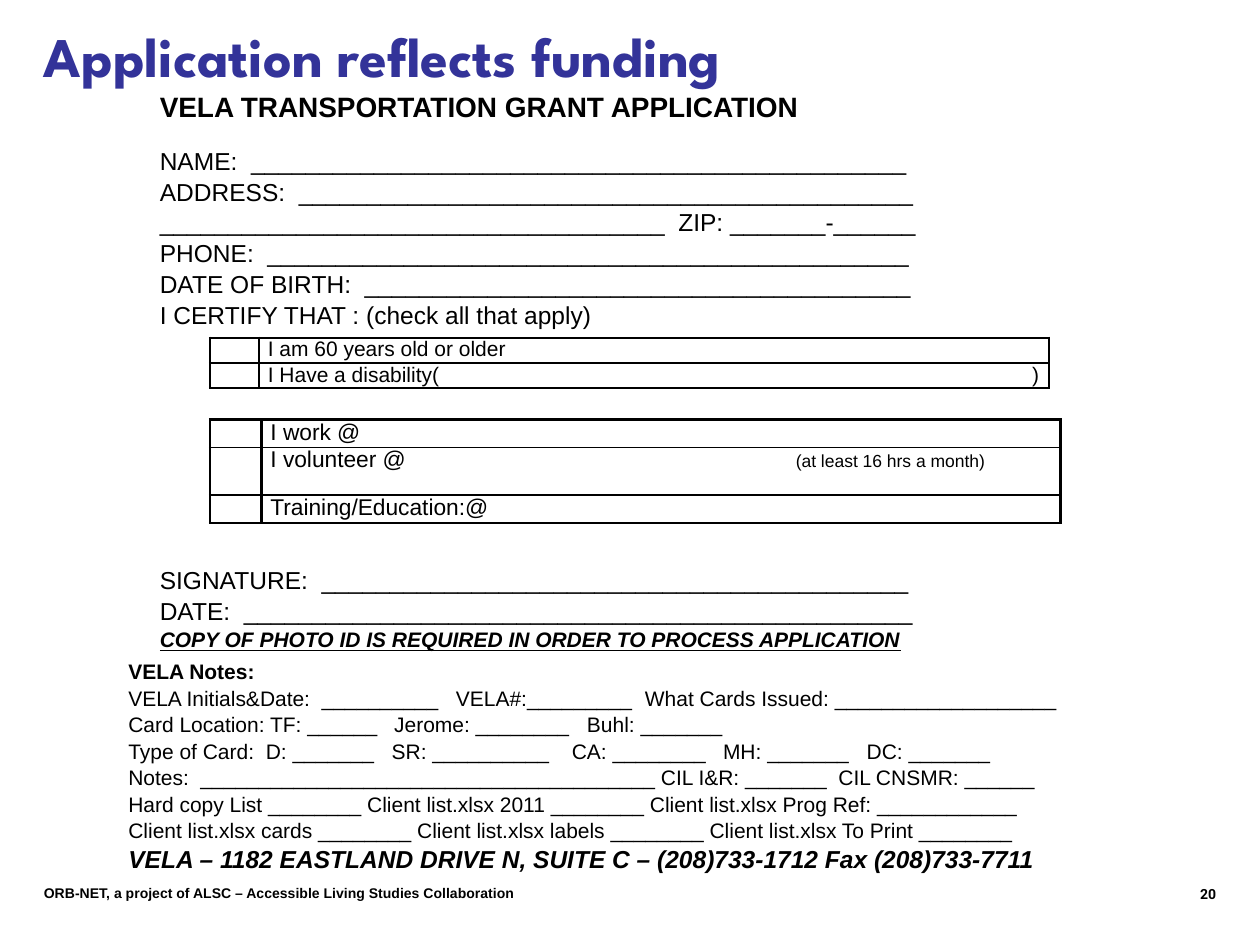
from lxml.etree import SubElement
from pptx import Presentation
from pptx.dml.color import RGBColor
from pptx.enum.text import MSO_ANCHOR, PP_ALIGN
from pptx.oxml import parse_xml
from pptx.oxml.ns import nsdecls, qn
from pptx.util import Inches, Pt

WIDTH, HEIGHT = 10, 7.5
BLACK, INDIGO = "000000", "333399"

TITLE = "Application reflects funding"
FOOTER = "ORB-NET, a project of ALSC – Accessible Living Studies Collaboration"
PAGE = "20"

APPLICATION = [
    ("VELA TRANSPORTATION GRANT APPLICATION", dict(size=16, bold=True)),
    ("NAME:  " + "_" * 48, dict(before=12)),
    ("ADDRESS:  " + "_" * 45, {}),
    ("_" * 37 + "  ZIP: _______-______", {}),
    ("PHONE:  " + "_" * 47, {}),
    ("DATE OF BIRTH:  " + "_" * 40, {}),
    ("I CERTIFY THAT : (check all that apply)", {}),
    ("SIGNATURE:  " + "_" * 43, dict(before=134)),
    ("DATE:  " + "_" * 49, {}),
    ("COPY OF PHOTO ID IS REQUIRED IN ORDER TO PROCESS APPLICATION",
     dict(size=12, bold=True, italic=True, underline=True)),
]

NOTES = [
    ("VELA Notes:", dict(bold=True)),
    ("VELA Initials&Date:  __________\tVELA#:_________\tWhat Cards Issued: " + "_" * 19,
     dict(tabs=[(2.6, "l"), (4.1, "l")])),
    ("Card Location: TF: ______\tJerome: ________\tBuhl: _______",
     dict(tabs=[(2.11, "l"), (3.64, "l")])),
    ("Type of Card:  D: _______\tSR: __________\tCA: ________\tMH: _______\tDC: _______",
     dict(tabs=[(2.09, "l"), (3.52, "l"), (4.72, "l"), (5.86, "l")])),
    ("Notes:  " + "_" * 39 + " CIL I&R: _______  CIL CNSMR: ______", {}),
    ("Hard copy List ________ Client list.xlsx 2011 ________ Client list.xlsx Prog Ref: ____________", {}),
    ("Client list.xlsx cards ________ Client list.xlsx labels ________ Client list.xlsx To Print ________", {}),
    ("VELA – 1182 EASTLAND DRIVE N, SUITE C – (208)733-1712 Fax (208)733-7711",
     dict(size=14, bold=True, italic=True)),
]

CHECKLISTS = [
    dict(top=2.68, columns=(0.39, 6.27), rows=(0.2, 0.2), size=12, entries=[
        ("I am 60 years old or older", {}),
        ("I Have a disability(\t)", dict(tabs=[(6.12, "r")])),
    ]),
    dict(top=3.33, columns=(0.41, 6.34), rows=(0.22, 0.38, 0.22), size=13, entries=[
        ("I work @", {}),
        ("I volunteer @\t", dict(tabs=[(4.17, "l")], small="(at least 16 hrs a month)")),
        ("Training/Education:@", {}),
    ]),
]


def color(value):
    return RGBColor.from_string(value)


def write(paragraph, text, size=14, face="Arial", ink=BLACK, bold=False, italic=False,
          underline=False, align=PP_ALIGN.LEFT, before=0, spacing=None, tabs=(), small=""):
    if tabs:
        stops = SubElement(paragraph._p.get_or_add_pPr(), qn("a:tabLst"))
        for place, side in tabs:
            SubElement(stops, qn("a:tab"), pos=str(Inches(place)), algn=side)
    paragraph.alignment = align
    paragraph.space_before = Pt(before)
    if spacing:
        paragraph.line_spacing = spacing
    for words, points in ((text, size), (small, 10)):
        if words:
            run = paragraph.add_run()
            run.text = words
            font = run.font
            font.size, font.name, font.color.rgb = Pt(points), face, color(ink)
            font.bold, font.italic, font.underline = bold, italic, underline
    if not text:
        SubElement(paragraph._p, qn("a:endParaRPr"), sz=str(size * 100))


def add_text(slide, area, lines, anchor=MSO_ANCHOR.TOP, wrap=True, **common):
    frame = slide.shapes.add_textbox(*map(Inches, area)).text_frame
    frame.word_wrap = wrap
    frame.vertical_anchor = anchor
    for index, (text, own) in enumerate(lines):
        paragraph = frame.add_paragraph() if index else frame.paragraphs[0]
        write(paragraph, text, **{**common, **own})


def outline(cell, first, last):
    widths = dict(L=1.5, R=1.5, T=1.5 if first else 1, B=1.5 if last else 1)
    for index, (side, width) in enumerate(widths.items()):
        cell._tc.get_or_add_tcPr().insert(index, parse_xml(
            f'<a:ln{side} {nsdecls("a")} w="{Pt(width)}"><a:solidFill>'
            f'<a:srgbClr val="{BLACK}"/></a:solidFill></a:ln{side}>'))


def add_checklist(slide, top, columns, rows, size, entries):
    area = (WIDTH / 6, top, sum(columns), sum(rows))
    table = slide.shapes.add_table(len(rows), len(columns), *map(Inches, area)).table
    table.first_row = table.horz_banding = False
    for column, width in zip(table.columns, columns):
        column.width = Inches(width)
    for r, (height, entry) in enumerate(zip(rows, entries)):
        table.rows[r].height = Inches(height)
        for c, (text, own) in enumerate((("", {}), entry)):
            cell = table.cell(r, c)
            cell.margin_left = cell.margin_right = Inches(0.07)
            cell.margin_top = cell.margin_bottom = 0
            cell.fill.background()
            outline(cell, r == 0, r == len(rows) - 1)
            write(cell.text_frame.paragraphs[0], text, size=size, **own)


def main():
    deck = Presentation()
    deck.slide_width, deck.slide_height = Inches(WIDTH), Inches(HEIGHT)
    slide = deck.slides.add_slide(deck.slide_layouts[6])
    add_text(slide, (0.25, 6.97, 5, 0.23), [(FOOTER, {})], size=8, bold=True)
    add_text(slide, (7.17, 6.98, 2.58, 0.27), [(PAGE, {})], size=8, bold=True,
             face="Roboto", align=PP_ALIGN.RIGHT)
    add_text(slide, (0.25, 0, 8.33, 0.87), [(TITLE, {})], anchor=MSO_ANCHOR.MIDDLE,
             size=32, bold=True, face="League Spartan", ink=INDIGO)
    add_text(slide, (1.17, 0.65, 7.67, 4.81), APPLICATION, spacing=1.05)
    for checklist in CHECKLISTS:
        add_checklist(slide, **checklist)
    add_text(slide, (0.92, 5.17, 7.62, 1.75), NOTES, wrap=False, size=12, spacing=1.05)
    deck.save("out.pptx")


if __name__ == "__main__":
    main()
